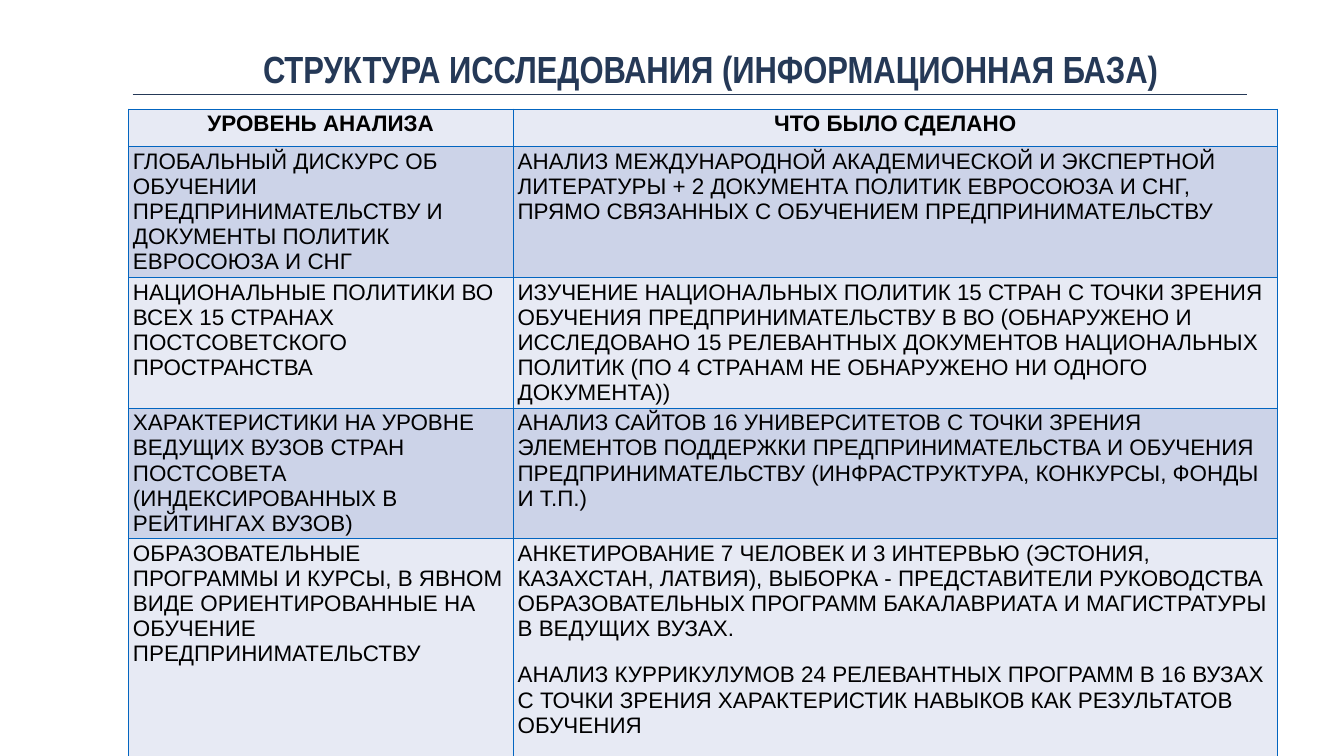
from lxml import etree
from pptx import Presentation
from pptx.dml.color import RGBColor
from pptx.enum.shapes import MSO_CONNECTOR
from pptx.enum.text import MSO_ANCHOR, MSO_AUTO_SIZE, PP_ALIGN
from pptx.oxml.ns import qn
from pptx.util import Pt

CENTER, LEFT = PP_ALIGN.CENTER, PP_ALIGN.LEFT
TOP = MSO_ANCHOR.TOP
NO_AUTOFIT = MSO_AUTO_SIZE.NONE
STRAIGHT = MSO_CONNECTOR.STRAIGHT
TITLE_ONLY = 5

NAVY, BLACK = "253957", "000000"
BORDER = "0365C0"
BANDS = ("E7EAF4", "CCD3E8")

TITLE = "СТРУКТУРА ИССЛЕДОВАНИЯ (ИНФОРМАЦИОННАЯ БАЗА)"
COLUMN_WIDTHS = (549.5, 1092)
ROW_HEIGHTS = (54, 145, 175, 147, 323)
# Each row: level of analysis, what was done
LEVELS = [
    ("УРОВЕНЬ АНАЛИЗА", "ЧТО БЫЛО СДЕЛАНО"),
    ("ГЛОБАЛЬНЫЙ ДИСКУРС ОБ ОБУЧЕНИИ ПРЕДПРИНИМАТЕЛЬСТВУ И ДОКУМЕНТЫ "
     "ПОЛИТИК ЕВРОСОЮЗА И СНГ",
     "АНАЛИЗ МЕЖДУНАРОДНОЙ АКАДЕМИЧЕСКОЙ И ЭКСПЕРТНОЙ ЛИТЕРАТУРЫ + 2 "
     "ДОКУМЕНТА ПОЛИТИК ЕВРОСОЮЗА И СНГ, ПРЯМО СВЯЗАННЫХ С ОБУЧЕНИЕМ "
     "ПРЕДПРИНИМАТЕЛЬСТВУ"),
    ("НАЦИОНАЛЬНЫЕ ПОЛИТИКИ ВО ВСЕХ 15 СТРАНАХ ПОСТСОВЕТСКОГО ПРОСТРАНСТВА",
     "ИЗУЧЕНИЕ НАЦИОНАЛЬНЫХ ПОЛИТИК 15 СТРАН С ТОЧКИ ЗРЕНИЯ ОБУЧЕНИЯ "
     "ПРЕДПРИНИМАТЕЛЬСТВУ В ВО (ОБНАРУЖЕНО И ИССЛЕДОВАНО 15 РЕЛЕВАНТНЫХ "
     "ДОКУМЕНТОВ НАЦИОНАЛЬНЫХ ПОЛИТИК (ПО 4 СТРАНАМ НЕ ОБНАРУЖЕНО НИ ОДНОГО "
     "ДОКУМЕНТА))"),
    ("ХАРАКТЕРИСТИКИ НА УРОВНЕ ВЕДУЩИХ ВУЗОВ СТРАН ПОСТСОВЕТА "
     "(ИНДЕКСИРОВАННЫХ В РЕЙТИНГАХ ВУЗОВ)",
     "АНАЛИЗ САЙТОВ 16 УНИВЕРСИТЕТОВ С ТОЧКИ ЗРЕНИЯ ЭЛЕМЕНТОВ ПОДДЕРЖКИ "
     "ПРЕДПРИНИМАТЕЛЬСТВА И ОБУЧЕНИЯ ПРЕДПРИНИМАТЕЛЬСТВУ (ИНФРАСТРУКТУРА, "
     "КОНКУРСЫ, ФОНДЫ И Т.П.)"),
    ("ОБРАЗОВАТЕЛЬНЫЕ ПРОГРАММЫ И КУРСЫ, В ЯВНОМ ВИДЕ ОРИЕНТИРОВАННЫЕ НА "
     "ОБУЧЕНИЕ ПРЕДПРИНИМАТЕЛЬСТВУ",
     "АНКЕТИРОВАНИЕ 7 ЧЕЛОВЕК И 3 ИНТЕРВЬЮ (ЭСТОНИЯ, КАЗАХСТАН, ЛАТВИЯ), "
     "ВЫБОРКА - ПРЕДСТАВИТЕЛИ РУКОВОДСТВА ОБРАЗОВАТЕЛЬНЫХ ПРОГРАММ "
     "БАКАЛАВРИАТА И МАГИСТРАТУРЫ В ВЕДУЩИХ ВУЗАХ.\n"
     "АНАЛИЗ КУРРИКУЛУМОВ 24 РЕЛЕВАНТНЫХ ПРОГРАММ В 16 ВУЗАХ С ТОЧКИ ЗРЕНИЯ "
     "ХАРАКТЕРИСТИК НАВЫКОВ КАК РЕЗУЛЬТАТОВ ОБУЧЕНИЯ"),
]


def rgb(color):
    return RGBColor.from_string(color)


def style(paragraph, font_name, size, color, bold, align):
    paragraph.alignment = align
    font = paragraph.font
    font.name, font.size, font.bold = font_name, Pt(size), bold
    font.color.rgb = rgb(color)


def add_title(slide, left, top, width, height):
    title = slide.shapes.title
    title.left, title.top = Pt(left), Pt(top)
    title.width, title.height = Pt(width), Pt(height)
    frame = title.text_frame
    frame.text = TITLE
    frame.word_wrap, frame.auto_size = True, NO_AUTOFIT
    frame.vertical_anchor = TOP
    frame.margin_left = frame.margin_right = Pt(6)
    frame.margin_top = frame.margin_bottom = Pt(6)
    heading = frame.paragraphs[0]
    heading.line_spacing = 1.0
    heading.space_before = Pt(0)
    style(heading, "Arial Narrow", 54, NAVY, True, CENTER)


def add_rule(slide, left, top, width):
    rule = slide.shapes.add_connector(
        STRAIGHT, Pt(left), Pt(top), Pt(left + width), Pt(top))
    rule.line.color.rgb, rule.line.width = rgb(NAVY), Pt(1)
    properties = rule._element.spPr
    etree.SubElement(properties, qn("a:effectLst"))


def add_borders(cell):
    properties = cell._tc.get_or_add_tcPr()
    for position, side in enumerate(("a:lnL", "a:lnR", "a:lnT", "a:lnB")):
        border = etree.Element(qn(side), w=str(Pt(1)))
        fill = etree.SubElement(border, qn("a:solidFill"))
        etree.SubElement(fill, qn("a:srgbClr"), val=BORDER)
        properties.insert(position, border)  # borders precede the fill


def fill_cell(cell, text, band, is_header):
    cell.text = text
    cell.vertical_anchor = TOP
    cell.margin_left = cell.margin_right = Pt(6.5)
    cell.margin_top = cell.margin_bottom = Pt(3.6)
    cell.fill.solid()
    cell.fill.fore_color.rgb = rgb(band)
    add_borders(cell)
    for index, paragraph in enumerate(cell.text_frame.paragraphs):
        style(paragraph, "Arial", 32, BLACK, is_header,
              CENTER if is_header else LEFT)
        paragraph.line_spacing = Pt(35.9)
        if index:
            paragraph.space_before = Pt(30)


def add_levels_table(slide, left, top):
    table = slide.shapes.add_table(
        len(LEVELS), len(COLUMN_WIDTHS), Pt(left), Pt(top),
        Pt(sum(COLUMN_WIDTHS)), Pt(sum(ROW_HEIGHTS))).table
    for column, width in zip(table.columns, COLUMN_WIDTHS):
        column.width = Pt(width)
    for index, (row, height) in enumerate(zip(table.rows, ROW_HEIGHTS)):
        row.height = Pt(height)
        for cell, text in zip(row.cells, LEVELS[index]):
            fill_cell(cell, text, BANDS[index % 2], index == 0)


def main():
    presentation = Presentation()
    presentation.slide_width, presentation.slide_height = Pt(1920), Pt(1080)
    layout = presentation.slide_layouts[TITLE_ONLY]
    slide = presentation.slides.add_slide(layout)
    add_title(slide, 169, 59, 1693.5, 182)
    add_rule(slide, 189.5, 135.5, 1592.5)
    add_levels_table(slide, 183.5, 155.5)
    presentation.save("out.pptx")


if __name__ == "__main__":
    main()
